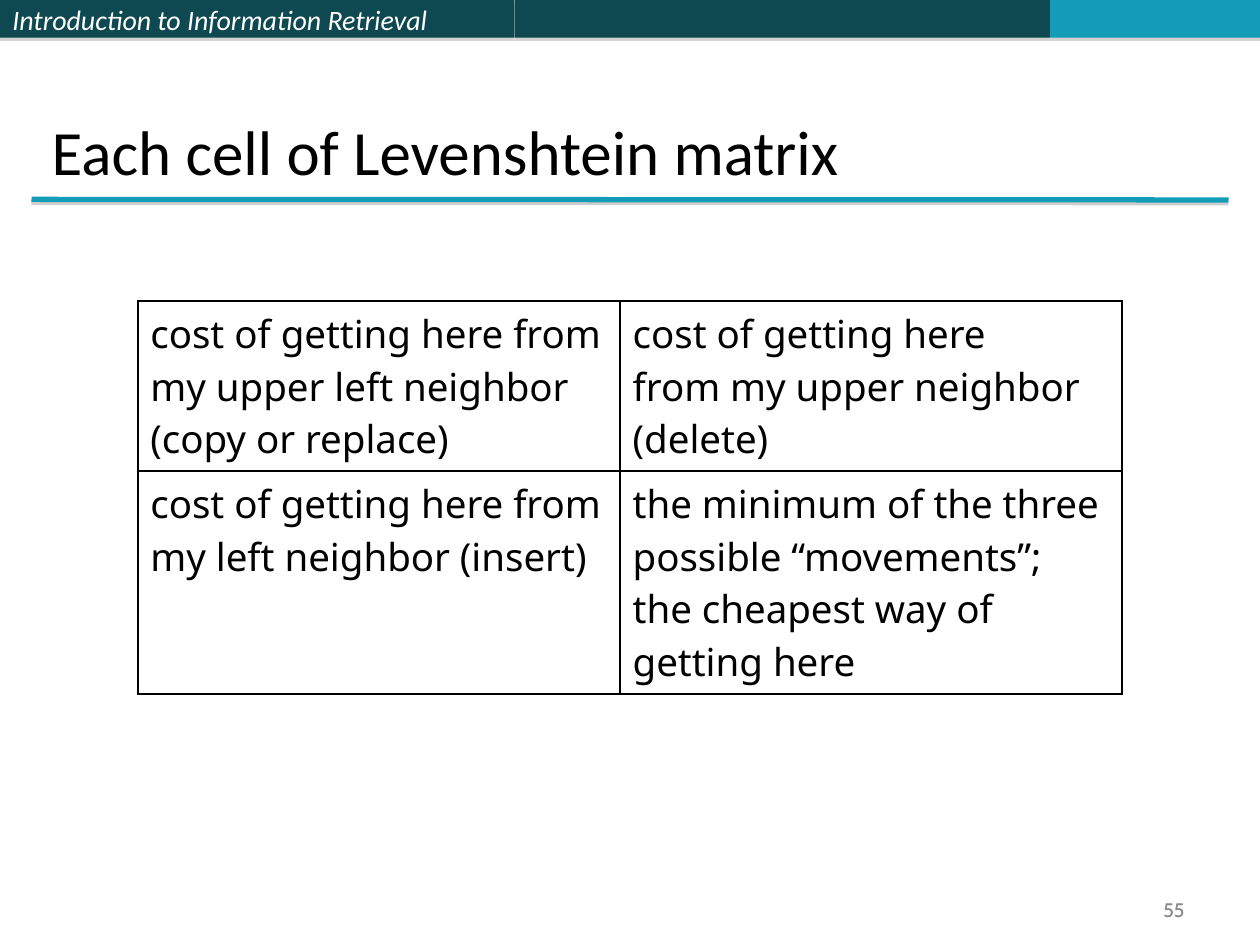
from lxml import etree
from pptx import Presentation
from pptx.dml.color import RGBColor
from pptx.enum.shapes import MSO_CONNECTOR, MSO_SHAPE
from pptx.enum.text import MSO_ANCHOR, PP_ALIGN
from pptx.oxml import parse_xml
from pptx.oxml.ns import nsdecls, qn
from pptx.util import Pt

RECTANGLE = MSO_SHAPE.RECTANGLE
STRAIGHT = MSO_CONNECTOR.STRAIGHT
LEFT, RIGHT = PP_ALIGN.LEFT, PP_ALIGN.RIGHT
TOP, MIDDLE, BOTTOM = MSO_ANCHOR.TOP, MSO_ANCHOR.MIDDLE, MSO_ANCHOR.BOTTOM

DARK_TEAL = RGBColor(0x0E, 0x48, 0x51)
TEAL = RGBColor(0x13, 0x9C, 0xB7)
WHITE = RGBColor(0xFF, 0xFF, 0xFF)
BLACK = RGBColor(0x00, 0x00, 0x00)
GREY = RGBColor(0x89, 0x89, 0x89)

MATRIX_CELLS = [
    [
        "cost of getting here from\nmy upper left neighbor\n(copy or replace)",
        "cost of getting here\nfrom my upper neighbor\n(delete)",
    ],
    [
        "cost of getting here from\nmy left neighbor (insert)",
        "the minimum of the three possible “movements”;\n"
        "the cheapest way of getting here",
    ],
]
COLUMN_SHARES = (0.49, 0.51)
ROW_SHARES = (0.433, 0.567)
ROW_OPACITIES = (0, 20)


def write_text(frame, text, *, size, color, font="Calibri", italic=False, align=LEFT):
    """Fill a text frame, one paragraph for each line of text."""
    frame.word_wrap = True
    for index, line in enumerate(text.split("\n")):
        paragraph = frame.paragraphs[0] if index == 0 else frame.add_paragraph()
        paragraph.alignment = align
        run = paragraph.add_run()
        run.text = line
        run.font.name = font
        run.font.size = Pt(size)
        run.font.italic = italic
        run.font.color.rgb = color


def add_shadow(shape, distance, opacity):
    """Give a shape or connector a hard grey shadow straight below it."""
    shape._element.spPr.append(parse_xml(
        f'<a:effectLst {nsdecls("a")}>'
        f'<a:outerShdw dist="{Pt(distance)}" dir="5400000" rotWithShape="0">'
        f'<a:srgbClr val="808080"><a:alpha val="{opacity * 1000}"/></a:srgbClr>'
        '</a:outerShdw></a:effectLst>'))


def add_text_box(slide, box, text, anchor, **text_format):
    frame = slide.shapes.add_textbox(*map(Pt, box)).text_frame
    frame.vertical_anchor = anchor
    write_text(frame, text, **text_format)


def add_header_band(slide, box):
    left, top, width, height = box
    segments = [
        (294 / 720, DARK_TEAL, "Introduction to Information Retrieval"),
        (306 / 720, DARK_TEAL, ""),
        (120 / 720, TEAL, ""),
    ]
    for share, color, text in segments:
        segment_width = width * share
        segment = slide.shapes.add_shape(
            RECTANGLE, Pt(left), Pt(top), Pt(segment_width), Pt(height))
        segment.fill.solid()
        segment.fill.fore_color.rgb = color
        segment.line.fill.background()
        add_shadow(segment, 1.8, 35)
        if text:
            segment.text_frame.vertical_anchor = MIDDLE
            write_text(segment.text_frame, text, size=16, color=WHITE, italic=True)
        left += segment_width


def add_title(slide, box):
    """Place the title with a rule just below its box."""
    left, top, width, height = box
    add_text_box(slide, box, "Each cell of Levenshtein matrix", BOTTOM,
                 size=36, color=BLACK)
    rule_top = top + height + 2.7
    rule = slide.shapes.add_connector(
        STRAIGHT, Pt(left - 4.5), Pt(rule_top), Pt(left + width - 0.75), Pt(rule_top + 0.3))
    rule.line.color.rgb = TEAL
    rule.line.width = Pt(3)
    add_shadow(rule, 1.6, 38)


def add_cell_borders(cell):
    properties = cell._tc.get_or_add_tcPr()
    for index, side in enumerate(("a:lnL", "a:lnR", "a:lnT", "a:lnB")):
        border = etree.Element(qn(side), w=str(Pt(1)))
        fill = etree.SubElement(border, qn("a:solidFill"))
        etree.SubElement(fill, qn("a:srgbClr"), val=str(BLACK))
        properties.insert(index, border)


def set_cell_fill(cell, opacity):
    """Fill a cell with white of the given opacity, or leave it clear at 0."""
    if not opacity:
        cell.fill.background()
        return
    cell.fill.solid()
    cell.fill.fore_color.rgb = WHITE
    for color in cell._tc.tcPr.iter(qn("a:srgbClr")):
        etree.SubElement(color, qn("a:alpha"), val=str(opacity * 1000))


def add_matrix_table(slide, box):
    width, height = box[2:]
    table = slide.shapes.add_table(
        len(ROW_SHARES), len(COLUMN_SHARES), *map(Pt, box)).table
    table.first_row = table.horz_banding = False
    for column, share in zip(table.columns, COLUMN_SHARES):
        column.width = Pt(width * share)
    for row, share, texts, opacity in zip(
            table.rows, ROW_SHARES, MATRIX_CELLS, ROW_OPACITIES):
        row.height = Pt(height * share)
        for cell, text in zip(row.cells, texts):
            cell.vertical_anchor = TOP
            write_text(cell.text_frame, text, size=22, color=BLACK, font="Noto Sans")
            set_cell_fill(cell, opacity)
            add_cell_borders(cell)


def add_page_number(slide, box):
    add_text_box(slide, box, "55", MIDDLE, size=12, color=GREY, align=RIGHT)


def main():
    presentation = Presentation()
    presentation.slide_width, presentation.slide_height = Pt(720), Pt(540)
    slide = presentation.slides.add_slide(presentation.slide_layouts[6])
    add_header_band(slide, (0, 0, 720, 21.6))
    for box in ((516, 510, 168, 19.2), (516, 508.5, 168, 21.6)):
        add_page_number(slide, box)
    add_title(slide, (22.5, 1, 680.25, 110.25))
    add_matrix_table(slide, (78.75, 172, 562.5, 224.6))
    presentation.save("out.pptx")


if __name__ == "__main__":
    main()
